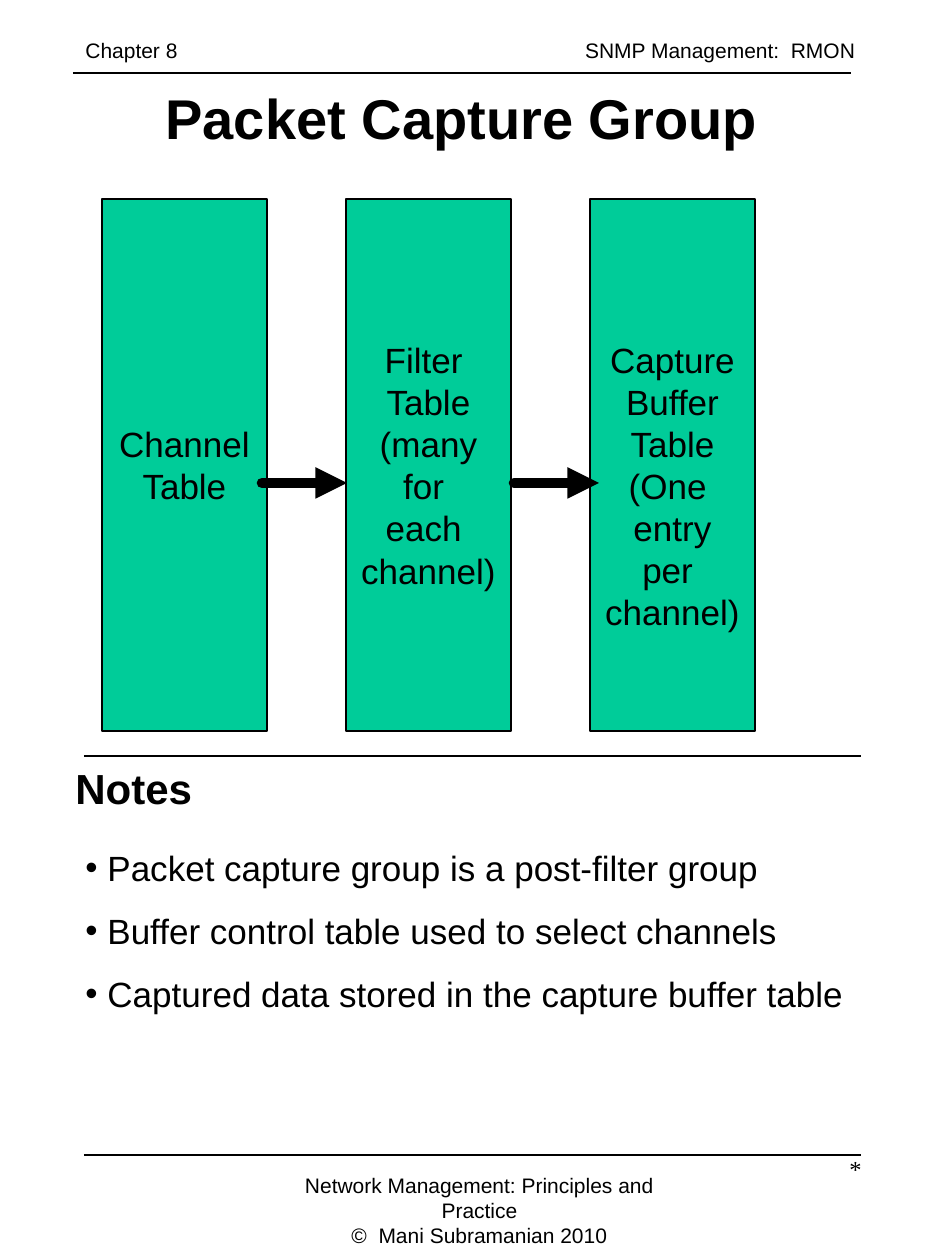
from dataclasses import dataclass

from lxml.etree import SubElement
from pptx import Presentation
from pptx.dml.color import RGBColor
from pptx.enum.shapes import MSO_CONNECTOR, MSO_SHAPE
from pptx.enum.text import MSO_ANCHOR, PP_ALIGN as Align
from pptx.oxml.ns import qn
from pptx.util import Emu, Pt


@dataclass(frozen=True)
class Theme:
    ink: RGBColor = RGBColor(0, 0, 0)
    box: RGBColor = RGBColor(0x00, 0xCC, 0x99)
    font: str = "Arial"
    mark_font: str = "Times New Roman"
    title: int = 32
    heading: int = 24
    body: int = 20
    mark: int = 14
    small: int = 12


theme = Theme()


def px(n):
    """Turn pixels, 126 to the inch, into EMU."""
    return Emu(round(n * 914400 / 126))


def write(tf, lines, size, align=Align.LEFT, bold=False, font=theme.font):
    """Fill a text frame with one paragraph per line."""
    tf.word_wrap = True
    for i, line in enumerate(lines):
        p = tf.add_paragraph() if i else tf.paragraphs[0]
        p.alignment = align
        r = p.add_run()
        r.text = line
        r.font.name, r.font.size, r.font.bold = font, Pt(size), bold
        r.font.color.rgb = theme.ink


prs = Presentation()
prs.slide_width, prs.slide_height = px(945), px(1260)
s = prs.slides.add_slide(prs.slide_layouts[6])

# Header, with the section name at a right tab
sp = s.shapes.add_textbox(px(73), px(31), px(823), px(38))
write(sp.text_frame, ["Chapter 8\tSNMP Management:  RMON"], theme.small)
tabs = SubElement(sp.text_frame.paragraphs[0]._p.get_or_add_pPr(), qn("a:tabLst"))
SubElement(tabs, qn("a:tab"), pos=str(px(770)), algn="r")

# Title
sp = s.shapes.add_textbox(px(73), px(77), px(777), px(81))
write(sp.text_frame, ["Packet Capture Group"], theme.title, Align.CENTER, bold=True)

# Table boxes
tables = [
    ["Channel", "Table"],
    ["Filter ", "Table", "(many", "for ", "each ", "channel)"],
    ["Capture", "Buffer", "Table", "(One ", "entry", "per ", "channel)"],
]
for i, lines in enumerate(tables):
    sp = s.shapes.add_shape(MSO_SHAPE.RECTANGLE, px(102 + 244 * i), px(199), px(165), px(532))
    sp.shadow.inherit = False
    sp.fill.solid()
    sp.fill.fore_color.rgb = theme.box
    sp.line.color.rgb, sp.line.width = theme.ink, Pt(0.75)
    write(sp.text_frame, lines, theme.body, Align.CENTER)
    sp.text_frame.vertical_anchor = MSO_ANCHOR.MIDDLE
capture_tf = sp.text_frame
capture_tf.margin_top = px(48)  # the last table's text sits lower

# Rules and arrows: x1, x2, y, points, arrow
lines = [
    (73, 851, 73, 1, False),
    (84, 861, 756, 1, False),
    (84, 861, 1155, 1, False),
    (262, 347, 483, 6, True),
    (514, 599, 483, 6, True),
]
for x1, x2, y, width, arrow in lines:
    line = s.shapes.add_connector(MSO_CONNECTOR.STRAIGHT, px(x1), px(y), px(x2), px(y))
    line.line.color.rgb, line.line.width = theme.ink, Pt(width)
    SubElement(line._element.spPr, qn("a:effectLst"))
    if arrow:
        ln = line.line._get_or_add_ln()
        ln.set("cap", "rnd")
        SubElement(ln, qn("a:tailEnd"), type="triangle")

# Notes
sp = s.shapes.add_textbox(px(63), px(756), px(210), px(63))
write(sp.text_frame, ["Notes"], theme.heading, bold=True)

notes = [
    "Packet capture group is a post-filter group",
    "Buffer control table used to select channels",
    "Captured data stored in the capture buffer table",
]
sp = s.shapes.add_textbox(px(73), px(819), px(798), px(195))
write(sp.text_frame, notes, theme.body)
for p in sp.text_frame.paragraphs:
    p.line_spacing = 1.5
    pPr = p._p.get_or_add_pPr()
    pPr.set("marL", str(px(22)))
    pPr.set("indent", str(-px(22)))
    SubElement(pPr, qn("a:buFont"), typeface=theme.font)
    SubElement(pPr, qn("a:buChar"), char="•")

# Footer
credit = ["Network Management: Principles and Practice", "©  Mani Subramanian 2010"]
sp = s.shapes.add_textbox(px(252), px(1166), px(455), px(63))
write(sp.text_frame, credit, theme.small, Align.CENTER)

sp = s.shapes.add_textbox(px(678), px(1148), px(196), px(84))
write(sp.text_frame, ["*"], theme.mark, Align.RIGHT, font=theme.mark_font)

prs.save("out.pptx")
